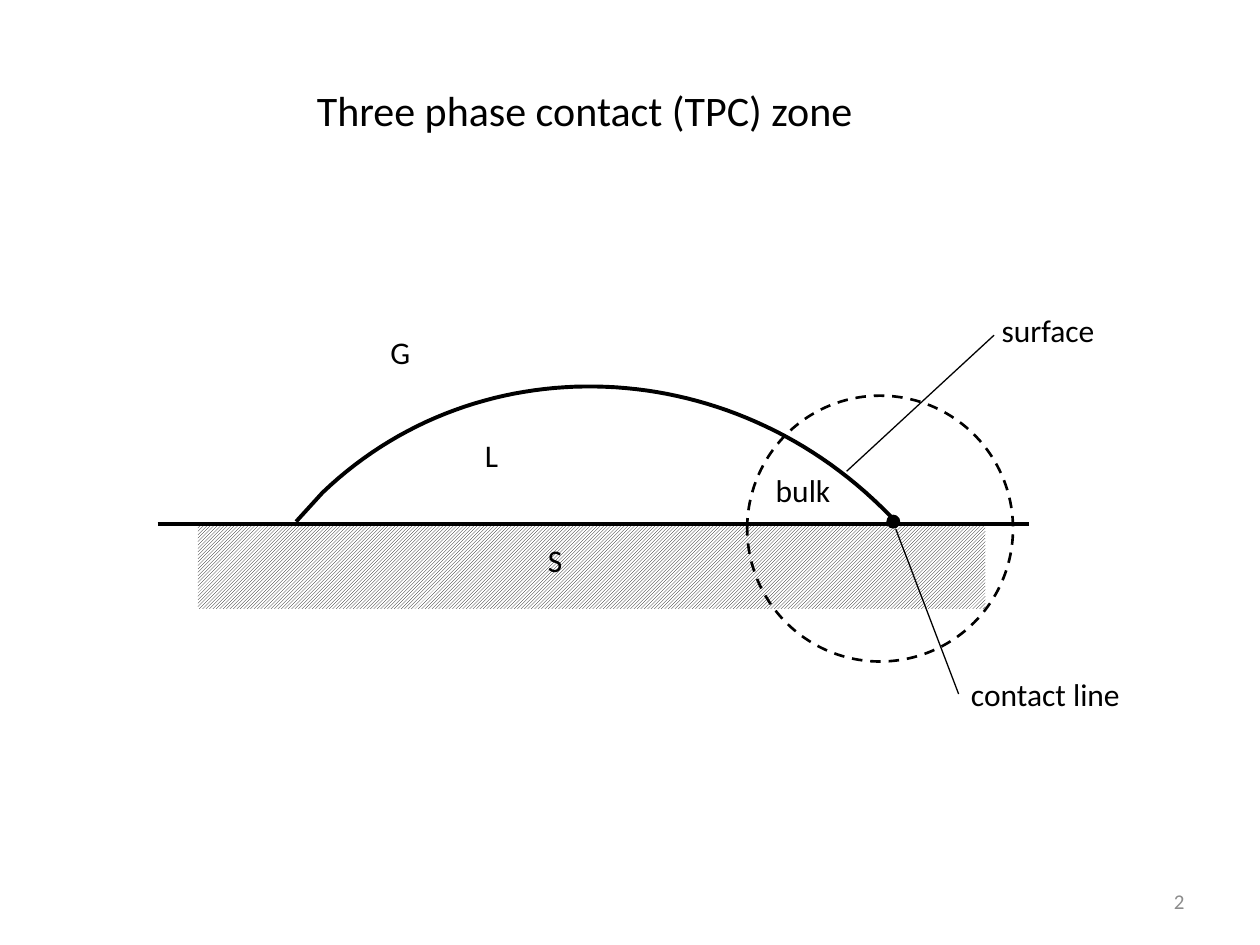
from lxml.etree import SubElement
from pptx import Presentation
from pptx.dml.color import RGBColor as Rgb
from pptx.enum.dml import MSO_LINE as Dash, MSO_PATTERN as Pat
from pptx.enum.shapes import MSO_CONNECTOR as Conn, MSO_SHAPE as Kind
from pptx.enum.text import MSO_ANCHOR as Anchor, MSO_AUTO_SIZE as Fit, PP_ALIGN as Align
from pptx.oxml.ns import qn
from pptx.util import Inches, Pt

INK = {"black": "000000", "white": "FFFFFF", "gray": "8C8C8C"}
FONT = "Calibri"
COLS, ROWS = 120, 90  # grid over the slide
CELL = Inches(10) / COLS


def ink(name):
    return Rgb.from_string(INK[name])


def place(box, col, row):
    """Slide position of a grid point counted from the box corner."""
    return round((box[0] + col) * CELL), round((box[1] + row) * CELL)


def size(*cells):
    return [round(n * CELL) for n in cells]


def pen(item, width):
    item.line.color.rgb = ink("black")
    item.line.width = Pt(width)


def text(slide, box, col, row, wide, high, words, pts=18, color="black"):
    item = slide.shapes.add_textbox(*place(box, col, row), *size(wide, high))
    frame = item.text_frame
    frame.word_wrap = True
    frame.auto_size = Fit.SHAPE_TO_FIT_TEXT
    run = frame.paragraphs[0].add_run()
    run.text = words
    run.font.name, run.font.size = FONT, Pt(pts)
    run.font.color.rgb = ink(color)
    return item


def line(slide, box, start, end, width):
    item = slide.shapes.add_connector(
        Conn.STRAIGHT, *place(box, *start), *place(box, *end))
    pen(item, width)
    SubElement(item.element.spPr, qn("a:effectLst"))
    return item


def shape(slide, box, kind, col, row, wide, high):
    item = slide.shapes.add_shape(kind, *place(box, col, row), *size(wide, high))
    item.shadow.inherit = False
    return item


def disc(slide, box, col, row, radius):
    return shape(slide, box, Kind.OVAL, col - radius, row - radius,
                 2 * radius, 2 * radius)


def curve(a, b, c, d, steps=60):
    """Points along a cubic curve."""
    for n in range(steps + 1):
        t = n / steps
        u = 1 - t
        yield tuple(u**3 * p + 3 * u * u * t * q + 3 * u * t * t * r + t**3 * s
                    for p, q, r, s in zip(a, b, c, d))


def drop(slide, box):
    # Liquid cap: one curve with short straight ends
    cap = curve((69.72, 20.08), (54.72, 4.6), (30.6, 3.64), (15.72, 17.92))
    pen_path = slide.shapes.build_freeform(*place(box, 70.2, 20.56))
    pen_path.add_line_segments(
        [place(box, *p) for p in [*cap, (13.2, 20.68)]], close=False)
    arc = pen_path.convert_to_shape()
    arc.shadow.inherit = False
    arc.fill.background()
    pen(arc, 2.25)

    # Hatched solid
    solid = shape(slide, box, Kind.RECTANGLE, 3.84, 21, 75, 8)
    solid.fill.patterned()
    solid.fill.pattern = Pat.LIGHT_UPWARD_DIAGONAL
    solid.fill.fore_color.rgb = ink("black")
    solid.fill.back_color.rgb = ink("white")
    solid.line.fill.background()

    # Contact zone and contact point
    zone = disc(slide, box, 68.82, 21.34, 12.66)
    zone.fill.background()
    pen(zone, 1.5)
    zone.line.dash_style = Dash.DASH
    dot = disc(slide, box, 70.08, 20.68, 0.6)
    dot.fill.solid()
    dot.fill.fore_color.rgb = ink("black")
    pen(dot, 0.75)

    # Labels
    labels = {}
    for words, col, row, wide in (
            ("G", 21, 2.1, 6), ("L", 30, 11.9, 6), ("S", 36, 21.9, 6),
            ("surface", 79.2, 0, 14), ("contact line", 76.3, 34.7, 19),
            ("bulk", 57.7, 15.3, 9)):
        labels[words] = text(slide, box, col, row, wide, 4.8, words)

    # Leaders and solid surface
    line(slide, box, (65.64, 15.88), (79.68, 2.92), 0.75)
    lead = line(slide, box, (70.32, 21.4), (76.3, 37.1), 0.75)
    lead.end_connect(labels["contact line"], 1)
    line(slide, box, (0, 20.92), (83, 20.92), 2.5)


def title(slide, box):
    text(slide, box, 0, 0, 57.2, 6, "Three phase contact (TPC) zone", 24)


def footer(slide, box):
    item = text(slide, box, 0, 0, 28, 4.8, "2", 12, "gray")
    item.text_frame.auto_size = Fit.NONE
    item.text_frame.vertical_anchor = Anchor.MIDDLE
    item.text_frame.paragraphs[0].alignment = Align.RIGHT


def main():
    deck = Presentation()
    deck.slide_width, deck.slide_height = size(COLS, ROWS)
    slide = deck.slides.add_slide(deck.slide_layouts[6])
    drop(slide, (15, 29))
    title(slide, (29, 7.5))
    footer(slide, (86, 83.4))
    deck.save("out.pptx")


if __name__ == "__main__":
    main()
